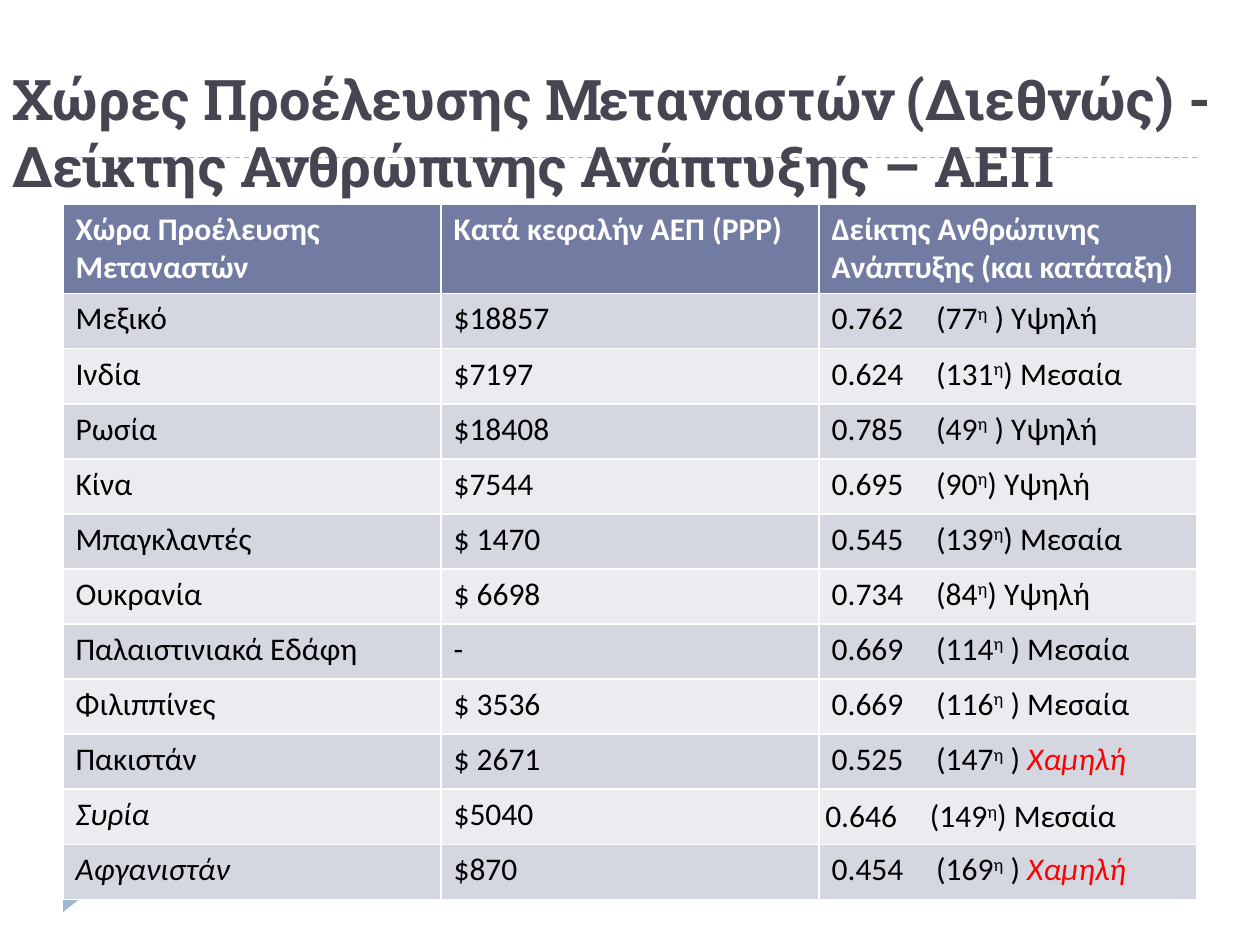
from lxml import etree
from pptx import Presentation
from pptx.dml.color import RGBColor
from pptx.enum import dml, shapes, text
from pptx.oxml.ns import qn
from pptx.util import Inches, Pt

COLORS = {
    "title": "464653", "accent": "9FB8CD", "header": "727CA3",
    "odd": "D5D7E0", "even": "EBECF0",
    "white": "FFFFFF", "black": "000000", "low": "FF0000",
}
TITLE = "Χώρες Προέλευσης Μεταναστών (Διεθνώς) - Δείκτης Ανθρώπινης Ανάπτυξης – ΑΕΠ"
HEADINGS = ["Χώρα Προέλευσης Μεταναστών", "Κατά κεφαλήν ΑΕΠ (PPP)",
            "Δείκτης Ανθρώπινης Ανάπτυξης (και κατάταξη)"]
LOW = "Χαμηλή"
# country, GDP per head, index, rank, closing bracket, level
COUNTRIES = [
    ("Μεξικό", "$18857", "0.762", "77", " )", "Υψηλή"),
    ("Ινδία", "$7197", "0.624", "131", ")", "Μεσαία"),
    ("Ρωσία", "$18408", "0.785", "49", " )", "Υψηλή"),
    ("Κίνα", "$7544", "0.695", "90", ")", "Υψηλή"),
    ("Μπαγκλαντές", "$ 1470", "0.545", "139", ")", "Μεσαία"),
    ("Ουκρανία", "$ 6698", "0.734", "84", ")", "Υψηλή"),
    ("Παλαιστινιακά Εδάφη", "-", "0.669", "114", " )", "Μεσαία"),
    ("Φιλιππίνες", "$ 3536", "0.669", "116", " )", "Μεσαία"),
    ("Πακιστάν", "$ 2671", "0.525", "147", " )", LOW),
    ("Συρία", "$5040", "0.646", "149", ")", "Μεσαία"),
    ("Αφγανιστάν", "$870", "0.454", "169", " )", LOW),
]
ITALIC_COUNTRIES = {"Συρία", "Αφγανιστάν"}


def rgb(name):
    return RGBColor.from_string(COLORS[name])


def add_decoration(slide, left, width, rule_tops):
    for top in rule_tops:
        rule = slide.shapes.add_connector(
            shapes.MSO_CONNECTOR.STRAIGHT, left, top, left + width, top)
        rule.line.color.rgb = rgb("accent")
        rule.line.width = Pt(0.75)
        rule.line.dash_style = dml.MSO_LINE.DASH
        etree.SubElement(rule._element.spPr, qn("a:effectLst"))
    marker = slide.shapes.add_shape(
        shapes.MSO_SHAPE.ISOSCELES_TRIANGLE, left - Inches(0.04),
        rule_tops[-1] + Inches(0.12), Inches(0.21), Inches(0.13))
    marker.rotation = 90
    marker.shadow.inherit = False
    marker.fill.solid()
    marker.fill.fore_color.rgb = rgb("accent")
    marker.line.fill.background()


def place_title(slide, left, top, width, height):
    title = slide.shapes.title
    title.left, title.top, title.width, title.height = left, top, width, height
    frame = title.text_frame
    frame.text = TITLE
    frame.word_wrap = True
    frame.auto_size = text.MSO_AUTO_SIZE.NONE
    frame.vertical_anchor = text.MSO_ANCHOR.BOTTOM
    heading = frame.paragraphs[0]
    heading.alignment = text.PP_ALIGN.LEFT
    heading.font.name = "Roboto Slab"
    heading.font.size = Pt(32)
    heading.font.bold = True
    heading.font.color.rgb = rgb("title")
    # Bring the title in front of the dashed rules
    title.element.getparent().append(title.element)


def style_cell(cell, fill, color, bold=False):
    cell.fill.solid()
    cell.fill.fore_color.rgb = rgb(fill)
    font = cell.text_frame.paragraphs[0].font
    font.name = "Calibri"
    font.size = Pt(18)
    font.bold = bold
    font.color.rgb = rgb(color)
    return font


def write_index(cell, index, rank, bracket, level):
    """Write index, rank with raised ordinal ending, and level."""
    paragraph = cell.text_frame.paragraphs[0]
    stops = etree.SubElement(paragraph._p.get_or_add_pPr(), qn("a:tabLst"))
    etree.SubElement(stops, qn("a:tab"), pos=str(Inches(0.83)), algn="l")
    for part in (f"{index}\t({rank}", "η", f"{bracket} ", level):
        run = paragraph.add_run()
        run.text = part
        if part == "η":
            run._r.get_or_add_rPr().set("baseline", "30000")
        elif part == LOW:
            run.font.italic = True
            run.font.color.rgb = rgb("low")


def add_country_table(slide, left, top, width, height):
    table = slide.shapes.add_table(
        len(COUNTRIES) + 1, len(HEADINGS), left, top, width, height).table
    header_height = Inches(0.7)
    for column in table.columns:
        column.width = width // len(HEADINGS)
    for row in table.rows:
        row.height = (height - header_height) // len(COUNTRIES)
    table.rows[0].height = header_height

    for column, heading in enumerate(HEADINGS):
        cell = table.cell(0, column)
        cell.text = heading
        style_cell(cell, "header", "white", bold=True)
    for row, (country, gdp, *index_parts) in enumerate(COUNTRIES, 1):
        fill = "odd" if row % 2 else "even"
        country_cell, gdp_cell, index_cell = table.rows[row].cells
        country_cell.text = country
        gdp_cell.text = gdp
        write_index(index_cell, *index_parts)
        country_font = style_cell(country_cell, fill, "black")
        country_font.italic = country in ITALIC_COUNTRIES
        for cell in (gdp_cell, index_cell):
            style_cell(cell, fill, "black")
        if country == "Συρία":
            index_cell.margin_left = Inches(0.05)
            index_cell.vertical_anchor = text.MSO_ANCHOR.MIDDLE


def main():
    deck = Presentation()
    deck.slide_width, deck.slide_height = Inches(10), Inches(7.5)
    slide = deck.slides.add_slide(deck.slide_layouts[5])
    left, width = Inches(0.5), Inches(9)
    add_decoration(slide, left, width, [Inches(1.25), Inches(6.95)])
    place_title(slide, 0, Inches(0.17), deck.slide_width, Inches(1.46))
    add_country_table(slide, left, Inches(1.62), width, Inches(5.51))
    deck.save("out.pptx")


if __name__ == "__main__":
    main()
